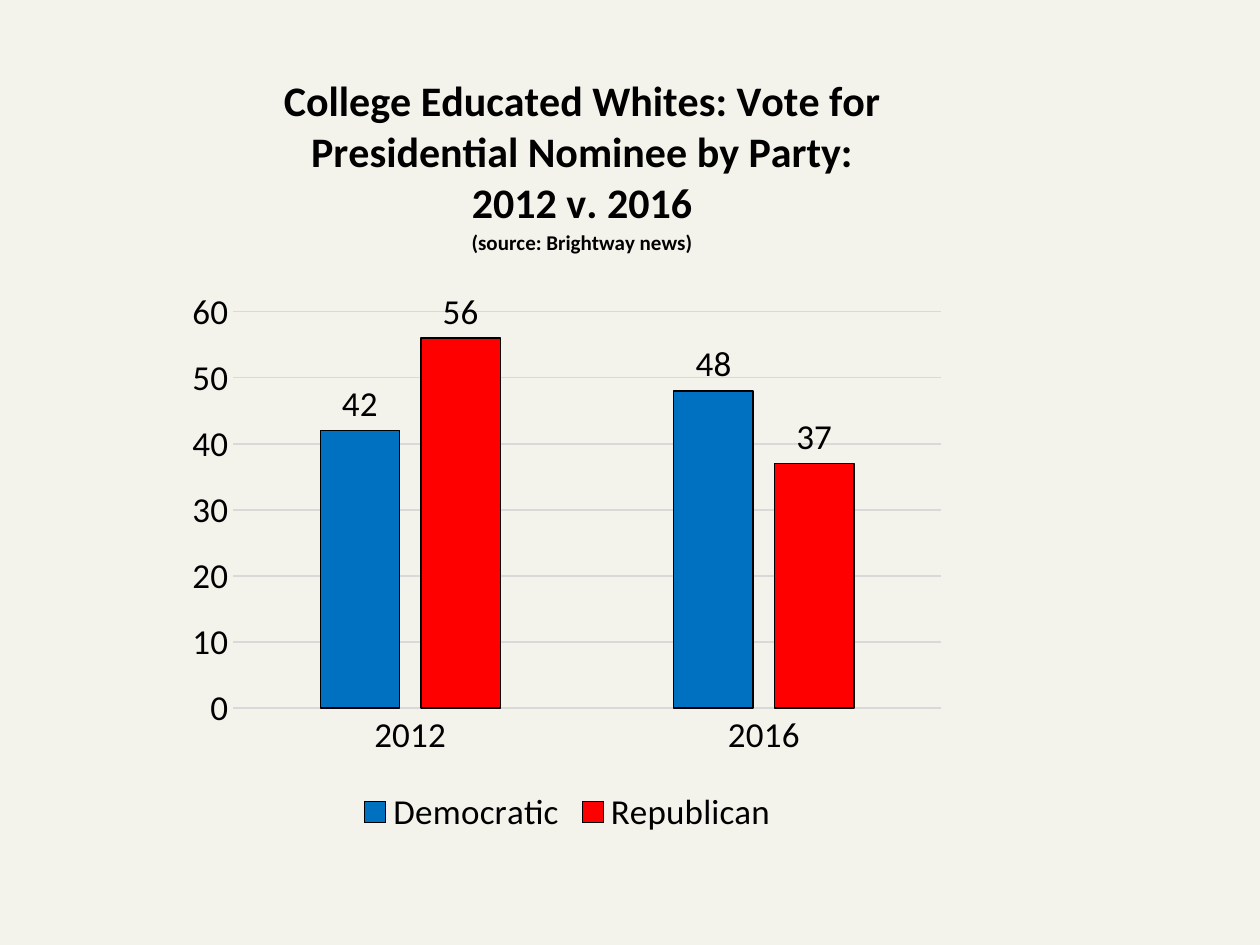
import pptx
import pptx.chart.data
import pptx.dml.color
import pptx.enum.chart
import pptx.oxml
import pptx.oxml.ns
import pptx.util
from pptx.dml.color import RGBColor
from pptx.util import Inches

BACKGROUND = RGBColor(0xF4, 0xF3, 0xEB)
BLACK = RGBColor(0, 0, 0)
GRID_GREY = RGBColor(0xD9, 0xD9, 0xD9)
PARTY_COLORS = {
    "Democratic": RGBColor(0x00, 0x70, 0xC0),
    "Republican": RGBColor(0xFF, 0x00, 0x00),
}
VOTES = {"Democratic": (42, 48), "Republican": (56, 37)}
TITLE_LINES = (
    ("College Educated Whites: Vote for Presidential Nominee by Party: 2012 v. 2016", 24),
    ("(source: Brightway news)", 12),
)


def style_font(font, size, bold=False):
    font.name = "Calibri"
    font.size = pptx.util.Pt(size)
    font.bold = bold
    font.color.rgb = BLACK


def style_line(line, color):
    line.color.rgb = color
    line.width = pptx.util.Pt(0.75)


def place_part(part, **fractions):
    """Give a chart title or plot area a manual layout, in fractions of the chart."""
    for old in part.findall(pptx.oxml.ns.qn("c:layout")):
        part.remove(old)
    target = '<c:layoutTarget val="inner"/>' if "w" in fractions else ""
    modes = "".join(f'<c:{key}Mode val="edge"/>' for key in "xy")
    values = "".join(f'<c:{key} val="{value}"/>' for key, value in fractions.items())
    layout = pptx.oxml.parse_xml(
        f'<c:layout {pptx.oxml.ns.nsdecls("c")}><c:manualLayout>'
        f"{target}{modes}{values}</c:manualLayout></c:layout>"
    )
    text = part.find(pptx.oxml.ns.qn("c:tx"))
    part.insert(0 if text is None else part.index(text) + 1, layout)


def add_title(chart):
    chart.has_title = True
    frame = chart.chart_title.text_frame
    frame.text = "\n".join(text for text, _ in TITLE_LINES)
    for paragraph, (_, size) in zip(frame.paragraphs, TITLE_LINES):
        style_font(paragraph.font, size, bold=True)
        for run in paragraph.runs:
            style_font(run.font, size, bold=True)
    chart.chart_title.include_in_layout = False
    place_part(chart.chart_title._element, x=0.13, y=0.01)


def style_axes(chart):
    years, share = chart.category_axis, chart.value_axis
    for axis in (years, share):
        axis.major_tick_mark = pptx.enum.chart.XL_TICK_MARK.NONE
        axis.minor_tick_mark = pptx.enum.chart.XL_TICK_MARK.NONE
        style_font(axis.tick_labels.font, 20)
    style_line(years.format.line, GRID_GREY)
    share.minimum_scale, share.maximum_scale, share.major_unit = 0, 60, 10
    share.format.line.fill.background()
    style_line(share.major_gridlines.format.line, GRID_GREY)


def style_bars(plot):
    plot.gap_width = 219
    plot.overlap = -27
    plot.vary_by_categories = False
    for party in plot.series:
        party.format.fill.solid()
        party.format.fill.fore_color.rgb = PARTY_COLORS[party.name]
        style_line(party.format.line, BLACK)
        labels = party.data_labels
        labels.show_value = True
        labels.position = pptx.enum.chart.XL_LABEL_POSITION.OUTSIDE_END
        style_font(labels.font, 20)


def add_vote_chart(slide):
    votes = pptx.chart.data.CategoryChartData()
    votes.categories = ["2012", "2016"]
    for party, shares in VOTES.items():
        votes.add_series(party, shares)
    chart = slide.shapes.add_chart(
        pptx.enum.chart.XL_CHART_TYPE.COLUMN_CLUSTERED,
        Inches(1.42), Inches(0.5), Inches(6.17), Inches(6.17), votes,
    ).chart
    style_font(chart.font, 20)
    add_title(chart)
    style_axes(chart)
    style_bars(chart.plots[0])
    place_part(chart._chartSpace.chart.plotArea, x=0.07, y=0.32, w=0.91, h=0.51)

    # Legend
    chart.has_legend = True
    chart.legend.position = pptx.enum.chart.XL_LEGEND_POSITION.BOTTOM
    chart.legend.include_in_layout = False
    style_font(chart.legend.font, 20)


def main():
    deck = pptx.Presentation()
    deck.slide_width, deck.slide_height = Inches(10), Inches(7.5)
    # The heading belongs to the chart, so the slide is blank
    slide = deck.slides.add_slide(deck.slide_layouts[6])
    slide.background.fill.solid()
    slide.background.fill.fore_color.rgb = BACKGROUND
    add_vote_chart(slide)
    deck.save("out.pptx")


if __name__ == "__main__":
    main()
